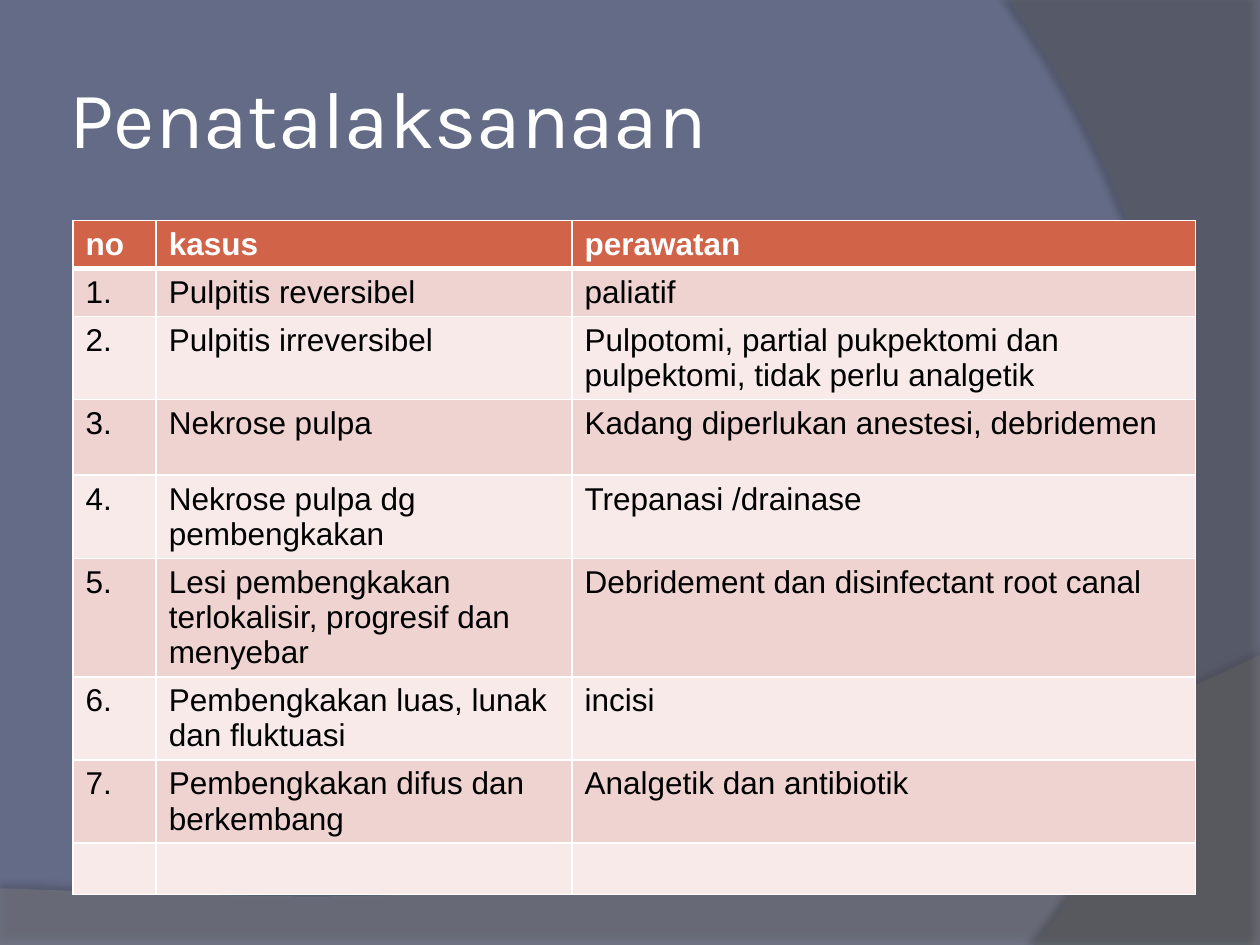
from lxml import etree
from pptx import Presentation
from pptx.dml.color import RGBColor
from pptx.enum.text import MSO_ANCHOR, MSO_AUTO_SIZE, PP_ALIGN
from pptx.oxml.ns import qn
from pptx.util import Inches, Pt

MIDDLE, LEFT, NO_FIT = MSO_ANCHOR.MIDDLE, PP_ALIGN.LEFT, MSO_AUTO_SIZE.NONE

COLORS = {
    "background": "646B86", "bottom": "7F7F7F", "side": "5E5E5E",
    "white": "FFFFFF", "black": "000000", "header": "D16349",
    "odd": "EED3D0", "even": "F7EAE9",
}
TITLE = "Penatalaksanaan"
HEADER = ("no", "kasus", "perawatan")
CASES = [
    ("Pulpitis reversibel", "paliatif"),
    ("Pulpitis irreversibel", "Pulpotomi, partial pukpektomi dan pulpektomi, tidak perlu analgetik"),
    ("Nekrose pulpa", "Kadang diperlukan anestesi, debridemen"),
    ("Nekrose pulpa dg pembengkakan", "Trepanasi /drainase"),
    ("Lesi pembengkakan terlokalisir, progresif dan menyebar", "Debridement dan disinfectant root canal"),
    ("Pembengkakan luas, lunak dan fluktuasi", "incisi"),
    ("Pembengkakan difus dan berkembang", "Analgetik dan antibiotik"),
]
COL_WIDTHS = (0.66, 3.3, 4.95)
ROW_HEIGHTS = (0.35, 0.35, 0.6, 0.6, 0.6, 0.86, 0.6, 0.6, 0.35)
SWOOSHES = [
    {"corners": [(0, 7.05), (0, 7.5), (10, 7.5)],
     "curve": [(10, 5.2), (5.59, 7.29), (3.91, 7.19), (0, 7.05)],
     "color": "bottom", "alpha": 45, "shadow": (35, 4, 3.5, 270)},
    {"corners": [(10, 0), (10, 7.5)],
     "curve": [(8.21, 7.5), (9.35, 6.19), (10.18, 3), (8, 0)],
     "color": "side", "alpha": 40, "shadow": (45, 4, 4, 180)},
]


def rgb(name):
    return RGBColor.from_string(COLORS[name])


def add_color(parent, name, alpha=100):
    clr = etree.SubElement(parent, qn("a:srgbClr"), val=COLORS[name])
    if alpha < 100:
        etree.SubElement(clr, qn("a:alpha"), val=str(alpha * 1000))


def write(tf, text, size=18, font="Arial", color="black", bold=False):
    p = tf.paragraphs[0]
    p.alignment = LEFT
    p.font.size = Pt(size)
    if text:
        r = p.add_run()
        r.text = text
        r.font.size, r.font.name, r.font.bold = Pt(size), font, bold
        r.font.color.rgb = rgb(color)


def bezier(points, steps=60):
    for i in range(steps + 1):
        t = i / steps
        weights = ((1 - t) ** 3, 3 * t * (1 - t) ** 2, 3 * t * t * (1 - t), t ** 3)
        yield tuple(sum(w * pt[axis] for w, pt in zip(weights, points)) for axis in (0, 1))


def add_swoosh(shapes, corners, curve, color, alpha, shadow):
    points = [(Inches(x), Inches(y)) for x, y in corners + list(bezier(curve))]
    builder = shapes.build_freeform(*points[0])
    builder.add_line_segments(points[1:], close=True)
    sp = builder.convert_to_shape()
    sp.shadow.inherit = False
    sp.line.fill.background()
    sp.fill.solid()
    sp.fill.fore_color.rgb = rgb(color)
    spPr = sp._element.spPr
    clr = spPr.find(qn("a:solidFill"))[0]
    etree.SubElement(clr, qn("a:alpha"), val=str(alpha * 1000))
    opacity, blur, dist, angle = shadow
    outer = etree.SubElement(
        spPr.find(qn("a:effectLst")), qn("a:outerShdw"), blurRad=str(Pt(blur)),
        dist=str(Pt(dist)), dir=str(angle * 60000), algn="ctr", rotWithShape="0")
    add_color(outer, "black", opacity)


def add_borders(cell, bottom, top):
    tcPr = cell._tc.get_or_add_tcPr()
    for side, width in (("L", 1), ("R", 1), ("T", top), ("B", bottom)):
        ln = etree.SubElement(tcPr, qn("a:ln" + side), w=str(Pt(width)))
        add_color(etree.SubElement(ln, qn("a:solidFill")), "white")


def add_cases(shapes):
    rows = [HEADER]
    rows += [(f"{n}.", *case) for n, case in enumerate(CASES, 1)]
    rows.append(("", "", ""))
    table = shapes.add_table(
        len(rows), len(HEADER), Inches(0.58), Inches(1.75),
        Inches(sum(COL_WIDTHS)), Inches(sum(ROW_HEIGHTS))).table
    for col, width in zip(table.columns, COL_WIDTHS):
        col.width = Inches(width)
    for i, (row, height, texts) in enumerate(zip(table.rows, ROW_HEIGHTS, rows)):
        row.height = Inches(height)
        head = i == 0
        for cell, text in zip(row.cells, texts):
            add_borders(cell, bottom=3 if head else 1, top=3 if i == 1 else 1)
            cell.fill.solid()
            cell.fill.fore_color.rgb = rgb("header" if head else "odd" if i % 2 else "even")
            write(cell.text_frame, text, color="white" if head else "black", bold=head)


def main():
    prs = Presentation()
    prs.slide_width, prs.slide_height = Inches(10), Inches(7.5)
    slide = prs.slides.add_slide(prs.slide_layouts[5])
    slide.background.fill.solid()
    slide.background.fill.fore_color.rgb = rgb("background")
    shapes = slide.shapes
    for swoosh in SWOOSHES:
        add_swoosh(shapes, **swoosh)

    title = shapes.title
    shapes._spTree.append(title._element)
    title.left, title.top = Inches(0.5), Inches(0.3)
    title.width, title.height = Inches(8.17), Inches(1.25)
    tf = title.text_frame
    tf.auto_size, tf.word_wrap, tf.vertical_anchor = NO_FIT, True, MIDDLE
    tf.margin_left = tf.margin_right = tf.margin_top = tf.margin_bottom = Inches(0.05)
    write(tf, TITLE, size=46, font="Karla", color="white")

    add_cases(shapes)
    prs.save("out.pptx")


if __name__ == "__main__":
    main()
